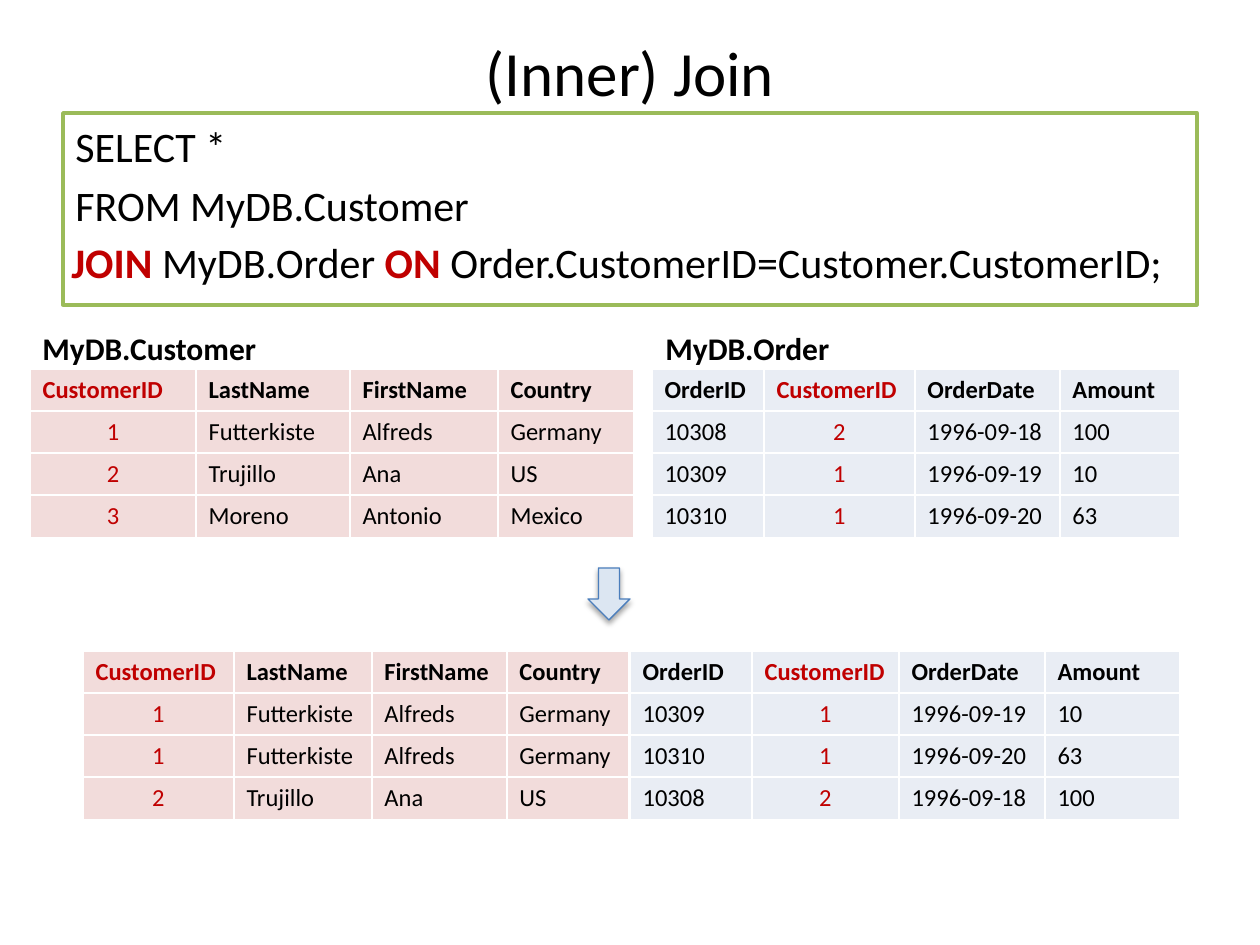
import dataclasses

import lxml.etree
import pptx
import pptx.dml.color
import pptx.enum.shapes
import pptx.enum.text
import pptx.oxml
import pptx.oxml.ns
import pptx.util

PX = 914400 / 126
ALIGN = pptx.enum.text.PP_ALIGN
ANCHOR = pptx.enum.text.MSO_ANCHOR
SHAPE = pptx.enum.shapes.MSO_SHAPE


@dataclasses.dataclass(frozen=True)
class Theme:
    font: str = "Calibri"
    ink: str = "000000"
    key: str = "C00000"
    paper: str = "FFFFFF"
    frame: str = "9BBB59"
    customer: str = "F2DCDB"
    order: str = "E9EDF4"
    arrow_fill: str = "DCE6F2"
    arrow_line: str = "4B7EBC"
    title_size: int = 36
    query_size: int = 24
    label_size: int = 18
    cell_size: int = 14


THEME = Theme()
KEY = "CustomerID"
CUSTOMER_HEAD = ["CustomerID", "LastName", "FirstName", "Country"]
CUSTOMERS = [
    ["1", "Futterkiste", "Alfreds", "Germany"],
    ["2", "Trujillo", "Ana", "US"],
    ["3", "Moreno", "Antonio", "Mexico"],
]
ORDER_HEAD = ["OrderID", "CustomerID", "OrderDate", "Amount"]
ORDERS = [
    ["10308", "2", "1996-09-18", "100"],
    ["10309", "1", "1996-09-19", "10"],
    ["10310", "1", "1996-09-20", "63"],
]


def px(length):
    return pptx.util.Emu(round(length * PX))


def place(box):
    return [px(length) for length in box]


def rgb(value):
    return pptx.dml.color.RGBColor.from_string(value)


def fill_with(target, color):
    target.fill.solid()
    target.fill.fore_color.rgb = rgb(color)


def outline(shape, color, width):
    shape.line.color.rgb = rgb(color)
    shape.line.width = pptx.util.Pt(width)


def add_span(para, text, size, color=THEME.ink, bold=False):
    span = para.add_run()
    span.text = text
    span.font.name = THEME.font
    span.font.size = pptx.util.Pt(size)
    span.font.bold = bold
    span.font.color.rgb = rgb(color)


def add_text_box(page, box, wrap=True):
    frame = page.shapes.add_textbox(*place(box)).text_frame
    frame.word_wrap = wrap
    return frame


def add_title(page, box, text):
    title = page.shapes.title
    title.left, title.top, title.width, title.height = place(box)
    frame = title.text_frame
    frame.vertical_anchor = ANCHOR.MIDDLE
    para = frame.paragraphs[0]
    para.alignment = ALIGN.CENTER
    add_span(para, text, THEME.title_size)


def add_query(page, box):
    left, top, width, height = box
    panel = page.shapes.add_shape(SHAPE.RECTANGLE, *place(box))
    panel.shadow.inherit = False
    fill_with(panel, THEME.paper)
    outline(panel, THEME.frame, 2)
    frame = panel.text_frame
    frame.word_wrap = True
    frame.vertical_anchor = ANCHOR.TOP
    frame.margin_top = px(8)
    for index, line in enumerate(["SELECT *", "FROM MyDB.Customer"]):
        para = frame.add_paragraph() if index else frame.paragraphs[0]
        para.alignment = ALIGN.LEFT
        para.space_before = pptx.util.Pt(4.8 * index)
        add_span(para, line, THEME.query_size)

    join = add_text_box(page, (left - 4, top + 116, width + 53, 86))
    join.margin_top = px(8)
    para = join.paragraphs[0]
    for text, is_keyword in [
        ("JOIN ", True),
        ("MyDB.Order ", False),
        ("ON ", True),
        ("Order.CustomerID=Customer.CustomerID;", False),
    ]:
        color = THEME.key if is_keyword else THEME.ink
        add_span(para, text, THEME.query_size, color, is_keyword)


def add_label(page, box, text):
    frame = add_text_box(page, box, wrap=False)
    add_span(frame.paragraphs[0], text, THEME.label_size, bold=True)


def border_cell(cell):
    properties = cell._tc.get_or_add_tcPr()
    fill = list(properties)
    for tag in ("a:lnL", "a:lnR", "a:lnT", "a:lnB"):
        line = lxml.etree.SubElement(properties, pptx.oxml.ns.qn(tag), w="12700")
        solid = lxml.etree.SubElement(line, pptx.oxml.ns.qn("a:solidFill"))
        lxml.etree.SubElement(solid, pptx.oxml.ns.qn("a:srgbClr"), val=THEME.paper)
    properties.extend(fill)


def add_data_table(page, corner, widths, head, records, color):
    rows = [head] + records
    box = (*corner, sum(widths), 42 * len(rows))
    table = page.shapes.add_table(len(rows), len(head), *place(box)).table
    table.horz_banding = False
    for column, width in zip(table.columns, widths):
        column.width = px(width)
    for row_index, row in enumerate(rows):
        for column_index, text in enumerate(row):
            cell = table.cell(row_index, column_index)
            is_head = row_index == 0
            is_key = head[column_index] == KEY
            fill_with(cell, color)
            border_cell(cell)
            cell.vertical_anchor = ANCHOR.MIDDLE
            para = cell.text_frame.paragraphs[0]
            para.alignment = ALIGN.CENTER if is_key and not is_head else ALIGN.LEFT
            ink = THEME.key if is_key else THEME.ink
            add_span(para, text, THEME.cell_size, ink, is_head)


def add_arrow(page, box):
    arrow = page.shapes.add_shape(SHAPE.DOWN_ARROW, *place(box))
    arrow.shadow.inherit = False
    fill_with(arrow, THEME.arrow_fill)
    outline(arrow, THEME.arrow_line, 0.75)
    effects = arrow._element.spPr.find(pptx.oxml.ns.qn("a:effectLst"))
    shadow = lxml.etree.SubElement(
        effects, pptx.oxml.ns.qn("a:outerShdw"),
        blurRad="39370", dist="22860", dir="5400000", rotWithShape="0")
    tint = lxml.etree.SubElement(shadow, pptx.oxml.ns.qn("a:srgbClr"), val=THEME.ink)
    lxml.etree.SubElement(tint, pptx.oxml.ns.qn("a:alpha"), val="35000")


def add_sources(page, left, top):
    order_left = left + 623
    add_label(page, (left, top, 241, 50), "MyDB.Customer")
    add_label(page, (order_left, top, 190, 50), "MyDB.Order")
    add_data_table(page, (left, top + 46), [166, 154, 148, 136],
                   CUSTOMER_HEAD, CUSTOMERS, THEME.customer)
    add_data_table(page, (order_left - 1, top + 46), [112, 151, 145, 120],
                   ORDER_HEAD, ORDERS, THEME.order)


def add_result(page, left, top):
    pairs = [(customer, order) for customer in CUSTOMERS for order in ORDERS
             if customer[0] == order[1]]
    add_data_table(page, (left, top), [151, 138, 135, 122],
                   CUSTOMER_HEAD, [customer for customer, _ in pairs], THEME.customer)
    add_data_table(page, (left + 547, top), [122, 147, 146, 135],
                   ORDER_HEAD, [order for _, order in pairs], THEME.order)


def main():
    deck = pptx.Presentation()
    deck.slide_width, deck.slide_height = px(1260), px(945)
    page = deck.slides.add_slide(deck.slide_layouts[5])
    add_title(page, (63, 38, 1134, 67), "(Inner) Join")
    add_query(page, (63, 113, 1134, 192))
    add_sources(page, 30, 323)
    add_arrow(page, (588, 568, 42, 52))
    add_result(page, 83, 651)
    deck.save("out.pptx")


if __name__ == "__main__":
    main()
